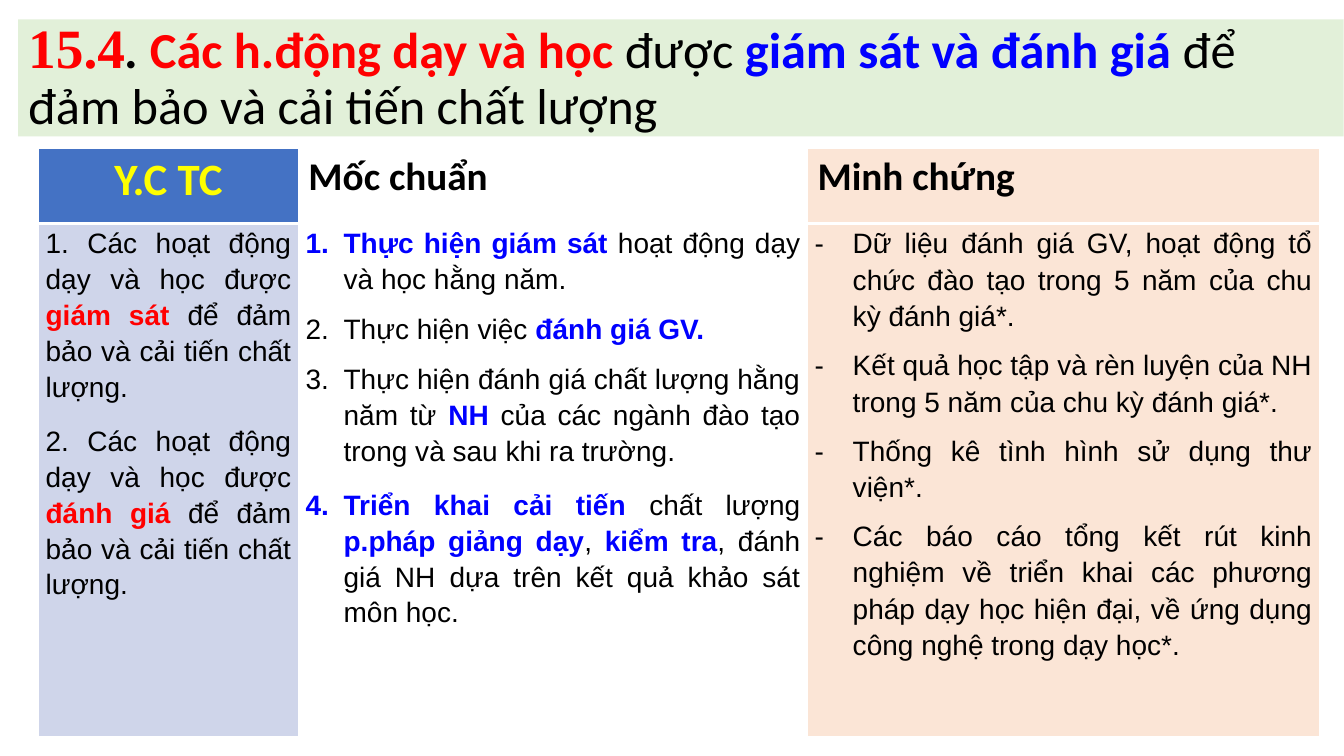
from dataclasses import dataclass

from lxml.etree import SubElement
from pptx import Presentation
from pptx.dml.color import RGBColor
from pptx.enum.shapes import MSO_SHAPE as Shape
from pptx.enum.text import MSO_ANCHOR as Anchor, PP_ALIGN as Align
from pptx.oxml.ns import qn
from pptx.util import Cm, Pt


@dataclass(frozen=True)
class Theme:
    black: str = "000000"
    white: str = "FFFFFF"
    red: str = "FF0000"
    blue: str = "0000FF"
    yellow: str = "FFFF00"
    banner: str = "E2F0D9"
    head: str = "4472C4"
    band: str = "CFD5EA"
    peach: str = "FBE5D6"
    heading_font: str = "Calibri"
    number_font: str = "Times New Roman"
    body_font: str = "Arial"
    title: float = 36
    number: float = 39.6
    head_first: float = 32
    head_other: float = 28
    body: float = 20


T = Theme()
RED = dict(color=T.red, bold=True)
BLUE = dict(color=T.blue, bold=True)

TITLE = [
    ("15.4", dict(RED, font=T.number_font, size=T.number)),
    (". ", dict(bold=True, italic=True)),
    ("Các h.động dạy và học ", RED),
    "được ",
    ("giám sát và đánh giá ", BLUE),
    "để đảm bảo và cải tiến chất lượng",
]

REQUIREMENTS = [
    ["1. Các hoạt động dạy và học được ", ("giám sát ", RED),
     "để đảm bảo và cải tiến chất lượng."],
    ["2. Các hoạt động dạy và học được ", ("đánh giá ", RED),
     "để đảm bảo và cải tiến chất lượng."],
]
BENCHMARKS = [
    [("Thực hiện giám sát ", BLUE), "hoạt động dạy và học hằng năm."],
    ["Thực hiện việc ", ("đánh giá GV.", BLUE)],
    ["Thực hiện đánh giá chất lượng hằng năm từ ", ("NH", BLUE),
     " của các ngành đào tạo trong và sau khi ra trường."],
    [("Triển khai cải tiến ", BLUE), "chất lượng ", ("p.pháp giảng dạy", BLUE),
     ", ", ("kiểm tra", BLUE),
     ", đánh giá NH dựa trên kết quả khảo sát môn học."],
]
EVIDENCE = [
    ["Dữ liệu đánh giá GV, hoạt động tổ chức đào tạo trong 5 năm của chu kỳ đánh giá*."],
    ["Kết quả học tập và rèn luyện của NH trong 5 năm của chu kỳ đánh giá*."],
    ["Thống kê tình hình sử dụng thư viện*."],
    ["Các báo cáo tổng kết rút kinh nghiệm về triển khai các phương pháp dạy học "
     "hiện đại, về ứng dụng công nghệ trong dạy học*."],
]

COLUMNS = [
    dict(width=6.55, head="Y.C TC", head_fill=T.head, body_fill=T.band,
         head_format=dict(size=T.head_first, color=T.yellow, align=Align.CENTER),
         items=REQUIREMENTS, format=dict(spacing=1.15, before=3, after=10)),
    dict(width=12.83, head="Mốc chuẩn", head_fill=T.white, body_fill=T.white,
         head_format=dict(size=T.head_other),
         items=BENCHMARKS, format=dict(spacing=1.15, after=10, bullet="1."),
         last_before=3),
    dict(width=12.9, head="Minh chứng", head_fill=T.peach, body_fill=T.peach,
         head_format=dict(size=T.head_other),
         items=EVIDENCE,
         format=dict(spacing=Pt(26), before=3, after=6, bullet="-")),
]
ROW_HEIGHTS = [1.9, 12.93]


def add_bullet(p, bullet):
    pPr = p._p.get_or_add_pPr()
    pPr.set("marL", str(Cm(0.96)))
    pPr.set("indent", str(-Cm(0.96)))
    if bullet == "1.":
        SubElement(pPr, qn("a:buFont"), typeface="+mj-lt")
        SubElement(pPr, qn("a:buAutoNum"), type="arabicPeriod")
    else:
        SubElement(pPr, qn("a:buFont"), typeface=T.body_font)
        SubElement(pPr, qn("a:buChar"), char=bullet)


def write(p, runs, align=Align.LEFT, spacing=1.0, before=0, after=0, bullet=None, **base):
    p.alignment = align
    p.line_spacing = spacing
    p.space_before, p.space_after = Pt(before), Pt(after)
    if bullet:
        add_bullet(p, bullet)
    for run in runs:
        text, own = (run, {}) if isinstance(run, str) else run
        look = dict(dict(font=T.body_font, size=T.body, color=T.black,
                         bold=False, italic=False), **base)
        look.update(own)
        r = p.add_run()
        r.text = text
        f = r.font
        f.name, f.size = look["font"], Pt(look["size"])
        f.bold, f.italic = look["bold"], look["italic"]
        f.color.rgb = RGBColor.from_string(look["color"])


def paint(fill, color):
    fill.solid()
    fill.fore_color.rgb = RGBColor.from_string(color)


def style_cell(cell, color, bottom):
    tcPr = cell._tc.get_or_add_tcPr()
    for side, width in zip("LRTB", (1, 1, 1, bottom)):
        ln = SubElement(tcPr, qn("a:ln" + side), w=str(Pt(width)))
        SubElement(SubElement(ln, qn("a:solidFill")), qn("a:srgbClr"), val=T.white)
    paint(cell.fill, color)


def add_title(slide):
    sp = slide.shapes.add_shape(Shape.RECTANGLE, Cm(0.46), Cm(0.49), Cm(33.4), Cm(2.95))
    sp.shadow.inherit = False
    paint(sp.fill, T.banner)
    sp.line.fill.background()
    tf = sp.text_frame
    tf.word_wrap = True
    tf.vertical_anchor = Anchor.MIDDLE
    write(tf.paragraphs[0], TITLE, spacing=0.9, font=T.heading_font, size=T.title)


def add_criteria(slide):
    width = sum(column["width"] for column in COLUMNS)
    table = slide.shapes.add_table(len(ROW_HEIGHTS), len(COLUMNS), Cm(0.97), Cm(3.73),
                                   Cm(width), Cm(sum(ROW_HEIGHTS))).table
    for row, height in zip(table.rows, ROW_HEIGHTS):
        row.height = Cm(height)
    for i, column in enumerate(COLUMNS):
        table.columns[i].width = Cm(column["width"])
        head, body = table.cell(0, i), table.cell(1, i)
        style_cell(head, column["head_fill"], 3)
        style_cell(body, column["body_fill"], 1)
        write(head.text_frame.paragraphs[0], [column["head"]],
              font=T.heading_font, bold=True, **column["head_format"])
        body.margin_left = body.margin_right = Cm(0.18)
        body.margin_top = body.margin_bottom = 0
        tf = body.text_frame
        for n, runs in enumerate(column["items"]):
            p = tf.add_paragraph() if n else tf.paragraphs[0]
            look = dict(column["format"], align=Align.JUSTIFY)
            if n == len(column["items"]) - 1 and "last_before" in column:
                look["before"] = column["last_before"]
            write(p, runs, **look)


def main():
    prs = Presentation()
    prs.slide_width, prs.slide_height = Cm(33.87), Cm(19.05)
    slide = prs.slides.add_slide(prs.slide_layouts[6])
    add_title(slide)
    add_criteria(slide)
    prs.save("out.pptx")


if __name__ == "__main__":
    main()
